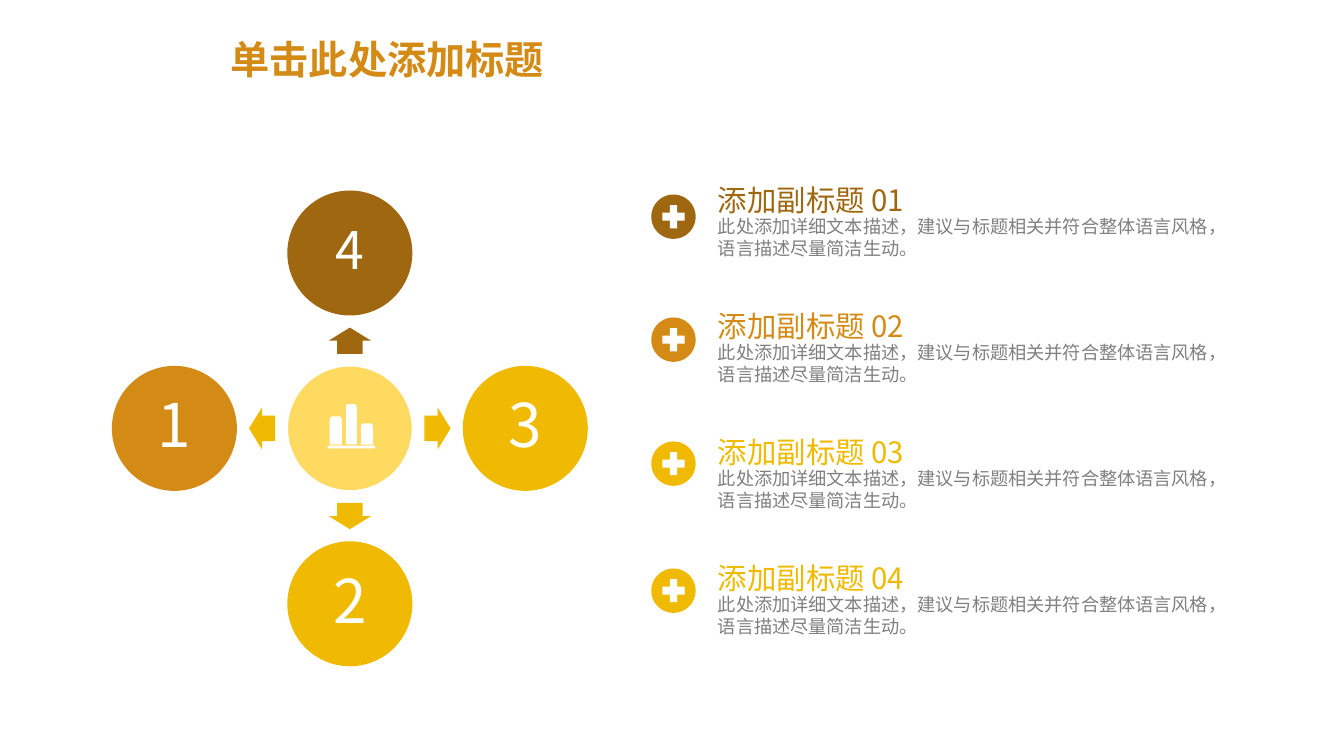
from lxml import etree
from pptx import Presentation
from pptx.dml.color import RGBColor
from pptx.enum import shapes, text
from pptx.oxml import ns
from pptx.util import Inches, Pt

BROWN = RGBColor(0x9F, 0x68, 0x10)
ORANGE = RGBColor(0xD4, 0x8B, 0x16)
GOLD = RGBColor(0xF0, 0xBA, 0x02)
PALE = RGBColor(0xFE, 0xDA, 0x60)
GREY = RGBColor(0x80, 0x80, 0x80)
WHITE = RGBColor(0xFF, 0xFF, 0xFF)

CJK_FONT = "Noto Sans CJK SC"
KIND = shapes.MSO_SHAPE
BODY = "此处添加详细文本描述，建议与标题相关并符合整体语言风格，语言描述尽量简洁生动。"

CENTER_X, CENTER_Y = 3.47, 4.25
CIRCLE = 1.24
CIRCLE_REACH, ARROW_REACH = 1.74, 0.87
ARROW_LENGTH, ARROW_SPAN = 0.26, 0.42

# number, size, colour, arrow, arrow colour, direction x and y
BRANCHES = [
    ("4", 37, BROWN, KIND.UP_ARROW, BROWN, 0, -1),
    ("3", 43, GOLD, KIND.RIGHT_ARROW, GOLD, 1, 0),
    ("2", 43, GOLD, KIND.DOWN_ARROW, GOLD, 0, 1),
    ("1", 43, ORANGE, KIND.LEFT_ARROW, GOLD, -1, 0),
]
# heading, colour, centre of the plus badge
ITEMS = [
    ("添加副标题 01", BROWN, 2.15),
    ("添加副标题 02", ORANGE, 3.37),
    ("添加副标题 03", GOLD, 4.6),
    ("添加副标题 04", GOLD, 5.86),
]
# left, top, width of each bar in the chart icon
BARS = [(3.27, 4.13, 0.12), (3.43, 4.01, 0.11), (3.58, 4.2, 0.12)]
BAR_BASE = 4.41


class SlideBuilder:
    def __init__(self, slide):
        self.slide = slide

    def shape(self, kind, left, top, width, height, fill, adjustments=()):
        shape = self.slide.shapes.add_shape(
            kind, Inches(left), Inches(top), Inches(width), Inches(height))
        shape.shadow.inherit = False
        shape.fill.solid()
        shape.fill.fore_color.rgb = fill
        shape.line.fill.background()
        for index, value in enumerate(adjustments):
            shape.adjustments[index] = value
        return shape

    def centered(self, kind, x, y, width, height, fill, adjustments=()):
        return self.shape(kind, x - width / 2, y - height / 2,
                          width, height, fill, adjustments)

    def fill_text(self, shape, words, color, frame_format, para_format,
                  font_format):
        frame = shape.text_frame
        margins = dict.fromkeys(
            ("margin_left", "margin_top", "margin_right", "margin_bottom"), 0)
        for name, value in (margins | frame_format).items():
            setattr(frame, name, value)
        para = frame.paragraphs[0]
        for name, value in para_format.items():
            setattr(para, name, value)
        span = para.add_run()
        span.text = words
        span.font.color.rgb = color
        for name, value in ({"name": CJK_FONT} | font_format).items():
            setattr(span.font, name, value)
        east_asian = etree.SubElement(
            span._r.get_or_add_rPr(), ns.qn("a:ea"))
        east_asian.set("typeface", CJK_FONT)

    def label(self, left, top, width, height, words, color,
              frame_format, para_format, font_format):
        box = self.slide.shapes.add_textbox(
            Inches(left), Inches(top), Inches(width), Inches(height))
        self.fill_text(box, words, color, frame_format, para_format,
                       font_format)

    def branch(self, number, size, color, arrow, arrow_color, dx, dy):
        """Draw an arrow and the numbered circle that it points to."""
        width, height = ((ARROW_LENGTH, ARROW_SPAN) if dx
                         else (ARROW_SPAN, ARROW_LENGTH))
        self.centered(arrow, CENTER_X + dx * ARROW_REACH,
                      CENTER_Y + dy * ARROW_REACH, width, height,
                      arrow_color, (0.6, 0.5))
        circle = self.centered(KIND.OVAL, CENTER_X + dx * CIRCLE_REACH,
                               CENTER_Y + dy * CIRCLE_REACH,
                               CIRCLE, CIRCLE, color)
        self.fill_text(circle, number, WHITE,
                       {"vertical_anchor": text.MSO_ANCHOR.MIDDLE},
                       {"alignment": text.PP_ALIGN.CENTER,
                        "line_spacing": 0.9},
                       {"size": Pt(size)})

    def hub(self):
        """Draw the central circle with its bar chart icon."""
        circle = self.centered(KIND.OVAL, CENTER_X, CENTER_Y,
                               CIRCLE, CIRCLE, PALE)
        circle.line.color.rgb = WHITE
        circle.line.width = Pt(1)
        for left, top, width in BARS:
            self.shape(KIND.ROUND_2_SAME_RECTANGLE, left, top, width,
                       BAR_BASE - top, WHITE, (0.25, 0))
        self.shape(KIND.RECTANGLE, 3.25, 4.42, 0.47, 0.03, WHITE)

    def item(self, top, heading, color, badge_y):
        self.label(7.12, top, 1.95, 0.36, heading, color,
                   {"vertical_anchor": text.MSO_ANCHOR.MIDDLE,
                    "word_wrap": False}, {}, {"size": Pt(21)})
        self.label(7.12, top + 0.34, 4.92, 0.72, BODY, GREY,
                   {"vertical_anchor": text.MSO_ANCHOR.TOP,
                    "word_wrap": True}, {}, {"size": Pt(13)})
        self.centered(KIND.OVAL, 6.68, badge_y, 0.44, 0.44, color)
        self.centered(KIND.CROSS, 6.68, badge_y, 0.22, 0.23, WHITE, (0.34,))


def main():
    deck = Presentation()
    deck.slide_width, deck.slide_height = Inches(13.33), Inches(7.5)
    page = SlideBuilder(deck.slides.add_slide(deck.slide_layouts[6]))

    page.label(2.19, 0.34, 11.5, 0.54, "单击此处添加标题", ORANGE,
               {"vertical_anchor": text.MSO_ANCHOR.MIDDLE, "word_wrap": True,
                "margin_left": Inches(0.1), "margin_right": Inches(0.1)},
               {"line_spacing": 0.9},
               {"name": "Montserrat", "size": Pt(28), "bold": True})
    page.hub()
    for branch in BRANCHES:
        page.branch(*branch)
    for row, item in enumerate(ITEMS):
        page.item(1.8 + 1.25 * row, *item)
    deck.save("out.pptx")


if __name__ == "__main__":
    main()
